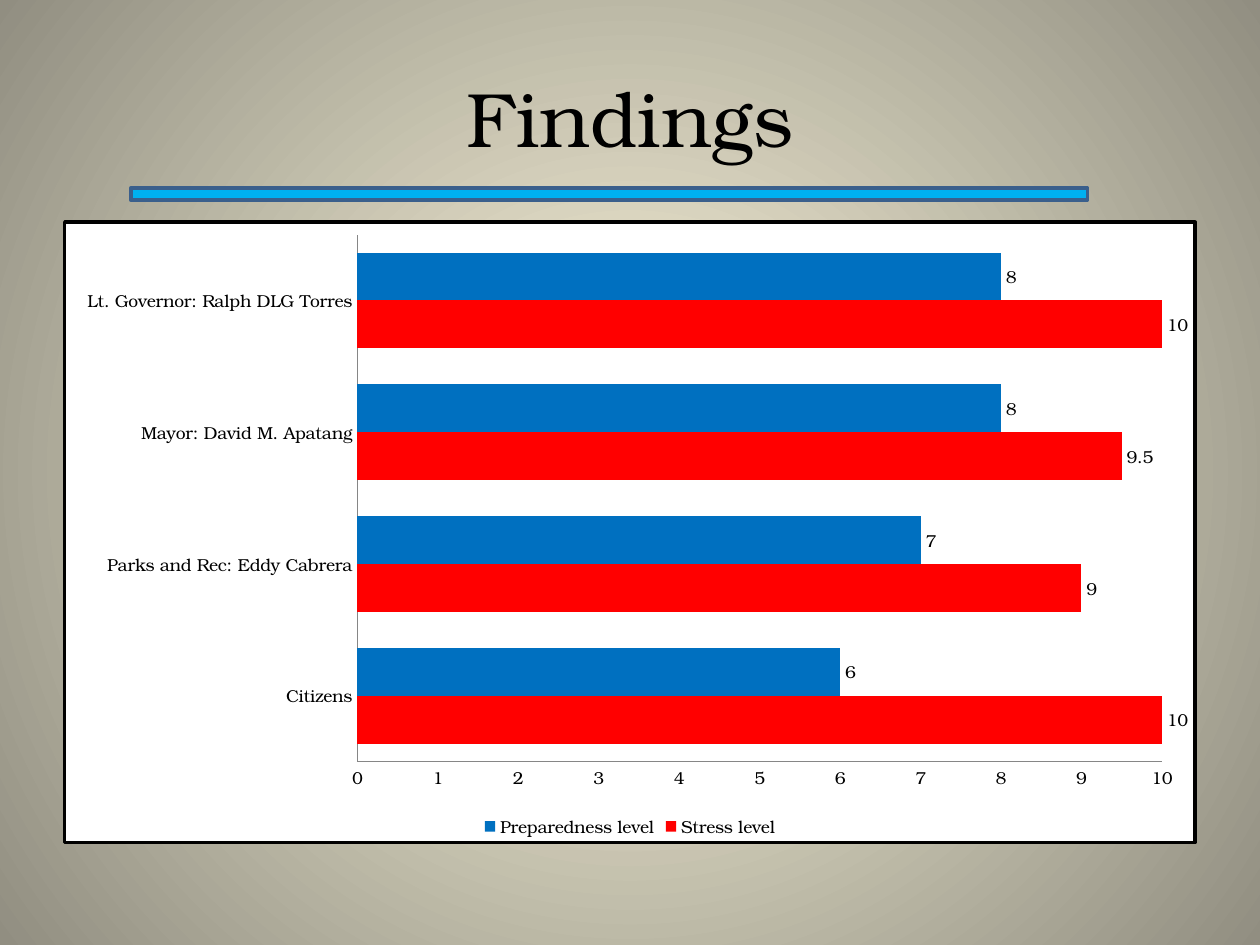
from lxml.etree import SubElement
from pptx import Presentation
from pptx.chart.data import CategoryChartData
from pptx.dml.color import RGBColor
from pptx.enum.chart import XL_CHART_TYPE, XL_LABEL_POSITION, XL_LEGEND_POSITION, XL_TICK_MARK
from pptx.enum.shapes import MSO_SHAPE
from pptx.enum.text import MSO_ANCHOR, PP_ALIGN
from pptx.oxml import parse_xml
from pptx.oxml.ns import nsdecls, qn
from pptx.util import Inches, Pt


def color(value):
    return RGBColor.from_string(value)


class SlideBuilder:
    font_name = "TeX Gyre Bonum"
    ink = "000000"
    columns, rows = 20, 30

    def __init__(self, presentation):
        self.column = presentation.slide_width / self.columns
        self.row = presentation.slide_height / self.rows
        self.slide = presentation.slides.add_slide(presentation.slide_layouts[6])

    def box(self, left, top, width, height):
        return [int(length) for length in (left * self.column, top * self.row,
                                           width * self.column, height * self.row)]

    def style(self, font, size):
        font.name = self.font_name
        font.size = Pt(size)
        font.color.rgb = color(self.ink)

    def background(self, inner, outer):
        fill = self.slide.background.fill
        fill.gradient()
        for stop, position, value in zip(fill.gradient_stops, (0, 1), (inner, outer)):
            stop.position = position
            stop.color.rgb = color(value)
        gradient = self.slide.element.find(".//" + qn("a:gradFill"))
        gradient.remove(gradient.find(qn("a:lin")))
        circle = SubElement(gradient, qn("a:path"))
        circle.set("path", "circle")
        center = SubElement(circle, qn("a:fillToRect"))
        for side in "ltrb":
            center.set(side, "50000")

    def title(self, text, *place):
        text_frame = self.slide.shapes.add_textbox(*self.box(*place)).text_frame
        text_frame.word_wrap = True
        text_frame.vertical_anchor = MSO_ANCHOR.MIDDLE
        text_frame.text = text
        paragraph = text_frame.paragraphs[0]
        paragraph.alignment = PP_ALIGN.CENTER
        self.style(paragraph.runs[0].font, 44)

    def rule(self, fill, line, *place):
        shape = self.slide.shapes.add_shape(MSO_SHAPE.MATH_MINUS, *self.box(*place))
        shape.shadow.inherit = False
        shape.fill.solid()
        shape.fill.fore_color.rgb = color(fill)
        shape.line.color.rgb = color(line)
        shape.line.width = Pt(2)

    def bar_chart(self, categories, series, *place):
        data = CategoryChartData()
        data.categories = categories
        for name, values, _ in series:
            data.add_series(name, values)
        chart = self.slide.shapes.add_chart(
            XL_CHART_TYPE.BAR_CLUSTERED, *self.box(*place), data).chart
        chart.has_title = False
        self.style(chart.font, 10)
        self.frame(chart, "FFFFFF")
        chart.has_legend = True
        chart.legend.position = XL_LEGEND_POSITION.BOTTOM
        chart.legend.include_in_layout = False
        for axis in (chart.category_axis, chart.value_axis):
            axis.major_tick_mark = axis.minor_tick_mark = XL_TICK_MARK.NONE
            axis.has_major_gridlines = False
            axis.format.line.color.rgb = color("868686")
            axis.format.line.width = Pt(0.75)
        chart.value_axis.minimum_scale = 0
        chart.value_axis.maximum_scale = 10
        chart.value_axis.major_unit = 1
        plot = chart.plots[0]
        plot.gap_width = 75
        plot.overlap = 0
        plot.vary_by_categories = False
        plot.has_data_labels = True
        plot.data_labels.show_value = True
        plot.data_labels.position = XL_LABEL_POSITION.OUTSIDE_END
        for bars, (_, _, fill) in zip(plot.series, series):
            bars.invert_if_negative = False
            bars.format.fill.solid()
            bars.format.fill.fore_color.rgb = color(fill)

    def frame(self, chart, fill):
        properties = parse_xml(
            f'<c:spPr {nsdecls("c", "a")}>'
            f'<a:solidFill><a:srgbClr val="{fill}"/></a:solidFill>'
            f'<a:ln w="{Pt(2)}"><a:solidFill><a:srgbClr val="{self.ink}"/></a:solidFill></a:ln>'
            '</c:spPr>')
        chart.element.find(qn("c:txPr")).addprevious(properties)


def main():
    presentation = Presentation()
    presentation.slide_width = Inches(10)
    presentation.slide_height = Inches(7.5)
    builder = SlideBuilder(presentation)
    builder.background("FCF7DD", "918E81")
    builder.title("Findings", 1, 1.2, 18, 5)
    builder.bar_chart(
        ["Citizens", "Parks and Rec: Eddy Cabrera",
         "Mayor: David M. Apatang", "Lt. Governor: Ralph DLG Torres"],
        [("Stress level", (10, 9, 9.5, 10), "FF0000"),
         ("Preparedness level", (6, 7, 8, 8), "0070C0")],
        1, 7, 18, 19.8)
    builder.rule("00B0F0", "3A5F8C", -0.66, 5.32, 20.66, 1.68)
    presentation.save("out.pptx")


if __name__ == "__main__":
    main()
